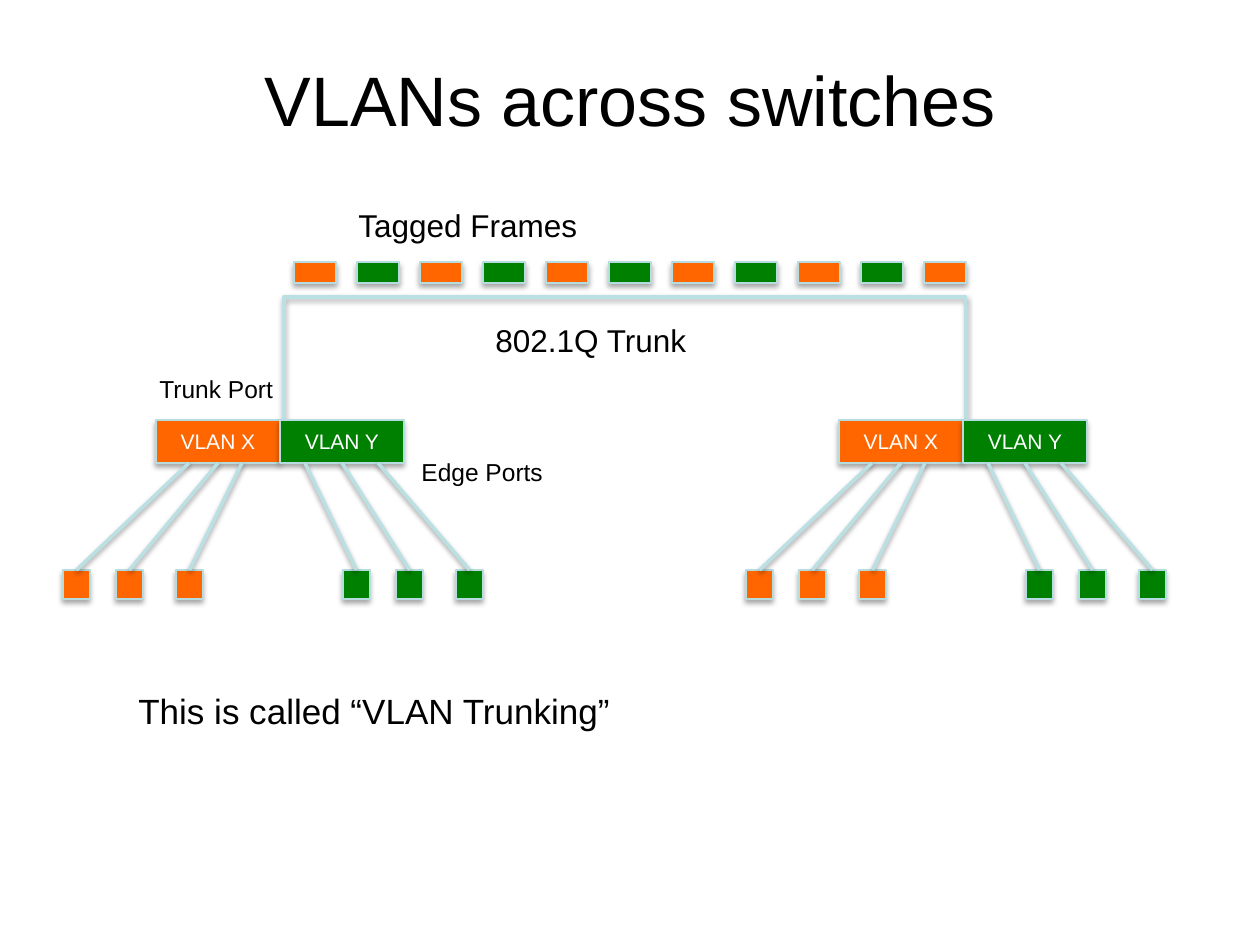
from dataclasses import dataclass

from lxml.etree import SubElement
from pptx import Presentation
from pptx.dml.color import RGBColor
from pptx.enum.shapes import MSO_CONNECTOR, MSO_SHAPE
from pptx.enum.text import MSO_ANCHOR, MSO_AUTO_SIZE, PP_ALIGN
from pptx.oxml.ns import qn
from pptx.util import Emu, Pt

EMU_PER_PX = 914400 / 126
TOP, BOTTOM = 0, 2


@dataclass(frozen=True)
class Theme:
    font: str = "Arial"
    text: str = "000000"
    on_fill: str = "FFFFFF"
    orange: str = "FF6600"
    green: str = "008000"
    outline: str = "B6DCDF"
    cable: str = "BBE0E3"
    title_size: int = 40
    note_size: int = 20
    trunk_size: int = 18
    port_size: int = 14
    vlan_size: int = 12
    outline_width: float = 0.75
    cable_width: float = 2


@dataclass(frozen=True)
class Box:
    left: int
    top: int
    width: int
    height: int


@dataclass(frozen=True)
class Label:
    text: str
    box: Box
    size: int
    wrap: bool = False
    align: PP_ALIGN = PP_ALIGN.LEFT
    anchor: MSO_ANCHOR = MSO_ANCHOR.TOP
    auto_size: MSO_AUTO_SIZE = MSO_AUTO_SIZE.SHAPE_TO_FIT_TEXT


@dataclass(frozen=True)
class Vlan:
    """One half of a switch; all offsets are measured from the switch's left side."""
    name: str
    color: str
    offset: int
    device_offsets: tuple[int, ...]
    port_offsets: tuple[int, ...]


THEME = Theme()
VLAN_WIDTH, VLAN_HEIGHT, SWITCH_TOP = 124, 43, 420
DEVICE_WIDTH, DEVICE_HEIGHT, DEVICE_TOP = 27, 29, 570
SWITCH_LEFTS = (839, 156)
FRAME_COUNT, FRAME_PITCH = 11, 63
VLANS = (
    Vlan("VLAN X", THEME.orange, 0, (-93, -40, 20), (33, 62, 86)),
    Vlan("VLAN Y", THEME.green, VLAN_WIDTH, (187, 240, 300), (149, 186, 222)),
)
LABELS = (
    Label("VLANs across switches", Box(63, 38, 1134, 120), THEME.title_size, True,
          PP_ALIGN.CENTER, MSO_ANCHOR.MIDDLE, MSO_AUTO_SIZE.NONE),
    Label("802.1Q Trunk", Box(483, 315, 218, 51), THEME.trunk_size),
    Label("Tagged Frames", Box(346, 200, 247, 51), THEME.trunk_size),
    Label("Edge Ports", Box(409, 451, 147, 43), THEME.port_size),
    Label("Trunk Port", Box(147, 368, 140, 43), THEME.port_size),
    Label("This is called “VLAN Trunking”", Box(126, 683, 1061, 55), THEME.note_size, True),
)


def px(*lengths: int) -> list[Emu]:
    return [Emu(round(length * EMU_PER_PX)) for length in lengths]


def set_attributes(target, values: dict) -> None:
    for name, value in values.items():
        setattr(target, name, value)


def add_shadow(shape, distance: float, opacity: int) -> None:
    """Append a soft downward shadow; call once the line is formatted."""
    effects = SubElement(shape._element.spPr, qn("a:effectLst"))
    shadow = SubElement(effects, qn("a:outerShdw"), blurRad=str(Pt(3.1)),
                        dist=str(Pt(distance)), dir="5400000", rotWithShape="0")
    color = SubElement(shadow, qn("a:srgbClr"), val="000000")
    SubElement(color, qn("a:alpha"), val=str(opacity * 1000))


def write_text(shape, text: str, size: int, color: str, align: PP_ALIGN) -> None:
    paragraph = shape.text_frame.paragraphs[0]
    paragraph.alignment = align
    run = paragraph.add_run()
    run.text = text
    set_attributes(run.font, {"name": THEME.font, "size": Pt(size)})
    run.font.color.rgb = RGBColor.from_string(color)


def add_block(slide, box: Box, color: str, text: str = ""):
    shape = slide.shapes.add_shape(
        MSO_SHAPE.RECTANGLE, *px(box.left, box.top, box.width, box.height))
    shape.fill.solid()
    shape.fill.fore_color.rgb = RGBColor.from_string(color)
    shape.line.color.rgb = RGBColor.from_string(THEME.outline)
    shape.line.width = Pt(THEME.outline_width)
    add_shadow(shape, 1.8, 35)
    if text:
        shape.text_frame.vertical_anchor = MSO_ANCHOR.MIDDLE
        write_text(shape, text, THEME.vlan_size, THEME.on_fill, PP_ALIGN.CENTER)
    return shape


def add_cable(slide, kind: MSO_CONNECTOR, start: tuple[int, int], end: tuple[int, int]):
    cable = slide.shapes.add_connector(kind, *px(*start, *end))
    cable.line.color.rgb = RGBColor.from_string(THEME.cable)
    cable.line.width = Pt(THEME.cable_width)
    add_shadow(cable, 1.6, 38)
    return cable


def add_trunk(slide) -> None:
    """Draw the five-part elbow that rises from one switch and drops to the other."""
    start, end = (280, 421), (963, 431)
    left_riser, trunk_level, right_riser = 284, 297, 966
    width, height = end[0] - start[0], end[1] - start[1]
    ratios = ((left_riser - start[0]) / width,
              (trunk_level - start[1]) / height,
              (right_riser - start[0]) / width)
    trunk = add_cable(slide, MSO_CONNECTOR.ELBOW, start, end)
    geometry = trunk._element.spPr.find(qn("a:prstGeom"))
    geometry.set("prst", "bentConnector5")
    adjustments = geometry.find(qn("a:avLst"))
    for number, ratio in enumerate(ratios, 1):
        SubElement(adjustments, qn("a:gd"), name=f"adj{number}",
                   fmla=f"val {round(ratio * 100000)}")


def add_switch(slide, left: int) -> None:
    halves = [add_block(slide, Box(left + vlan.offset, SWITCH_TOP, VLAN_WIDTH, VLAN_HEIGHT),
                        vlan.color, vlan.name) for vlan in VLANS]
    for vlan, half in zip(VLANS, halves):
        devices = [add_block(slide, Box(left + offset, DEVICE_TOP, DEVICE_WIDTH, DEVICE_HEIGHT),
                             vlan.color) for offset in vlan.device_offsets]
        for device, offset, port in zip(devices, vlan.device_offsets, vlan.port_offsets):
            cable = add_cable(slide, MSO_CONNECTOR.STRAIGHT,
                              (left + offset + DEVICE_WIDTH // 2, DEVICE_TOP),
                              (left + port, SWITCH_TOP + VLAN_HEIGHT))
            cable.begin_connect(device, TOP)
            if port == vlan.offset + VLAN_WIDTH // 2:
                cable.end_connect(half, BOTTOM)


def add_label(slide, label: Label) -> None:
    box = label.box
    shape = slide.shapes.add_textbox(*px(box.left, box.top, box.width, box.height))
    set_attributes(shape.text_frame, {
        "word_wrap": label.wrap,
        "auto_size": label.auto_size,
        "vertical_anchor": label.anchor,
    })
    write_text(shape, label.text, label.size, THEME.text, label.align)


def main() -> None:
    presentation = Presentation()
    presentation.slide_width, presentation.slide_height = px(1260, 945)
    slide = presentation.slides.add_slide(presentation.slide_layouts[6])
    add_trunk(slide)
    for index in range(FRAME_COUNT):
        add_block(slide, Box(294 + index * FRAME_PITCH, 262, 42, 21),
                  THEME.green if index % 2 else THEME.orange)
    for left in SWITCH_LEFTS:
        add_switch(slide, left)
    for label in LABELS:
        add_label(slide, label)
    presentation.save("out.pptx")


if __name__ == "__main__":
    main()
